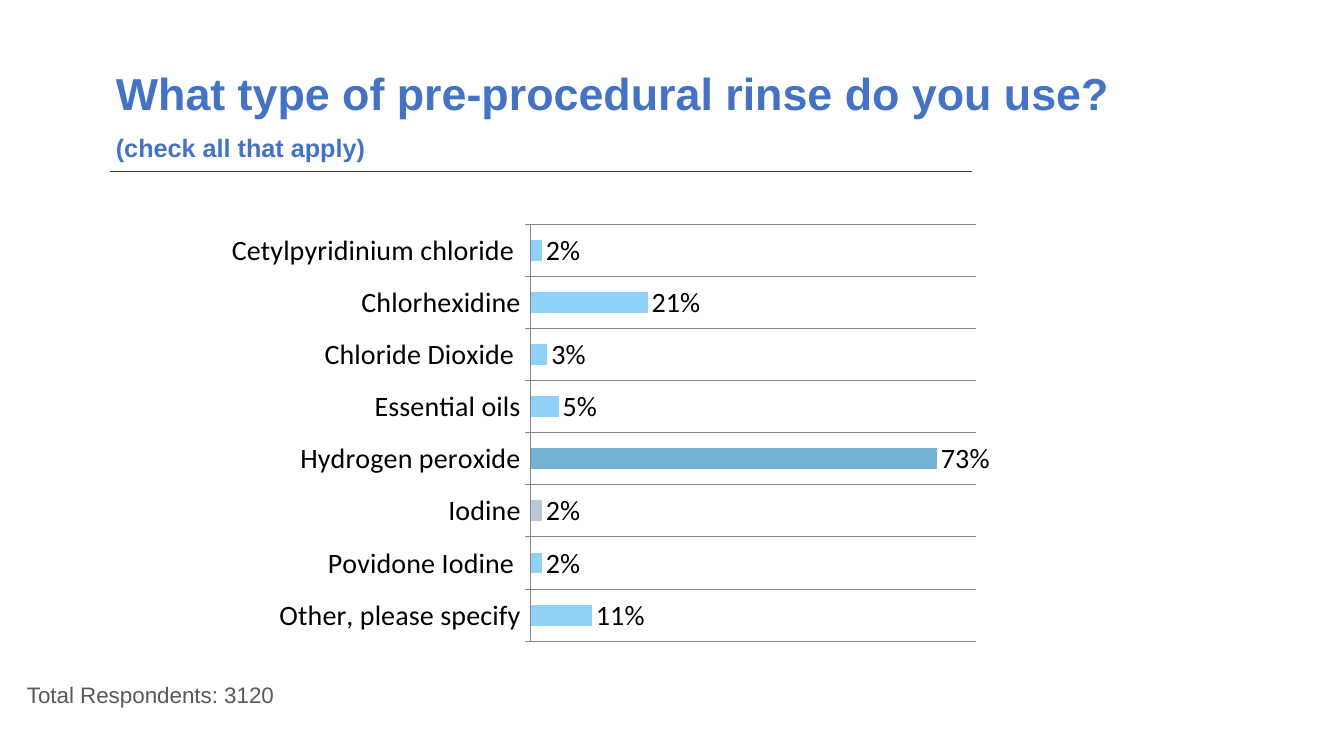
import pptx
import pptx.chart.data
import pptx.dml.color
import pptx.enum.chart
import pptx.enum.shapes
import pptx.enum.text
import pptx.oxml
import pptx.oxml.ns
import pptx.util
from lxml import etree

RGBColor = pptx.dml.color.RGBColor
TITLE_BLUE = RGBColor(0x44, 0x72, 0xC4)
NOTE_GRAY = RGBColor(0x59, 0x59, 0x59)
RULE_GRAY = RGBColor(0x40, 0x40, 0x40)
GRID_GRAY = RGBColor(0x86, 0x86, 0x86)
BLACK = RGBColor(0x00, 0x00, 0x00)
BAR_BLUE = RGBColor(0x8E, 0xD3, 0xF7)
TOP_BAR_BLUE = RGBColor(0x75, 0xB2, 0xD2)
LOW_BAR_GRAY = RGBColor(0xBA, 0xCA, 0xD4)

EMU_PER_PX = 914400 / 100.8
RINSES = [
    ("Cetylpyridinium chloride ", 0.02),
    ("Chlorhexidine", 0.21),
    ("Chloride Dioxide ", 0.03),
    ("Essential oils", 0.05),
    ("Hydrogen peroxide", 0.73),
    ("Iodine", 0.02),
    ("Povidone Iodine ", 0.02),
    ("Other, please specify", 0.11),
]
POINT_COLORS = {4: TOP_BAR_BLUE, 5: LOW_BAR_GRAY}
PLOT_AREA = {"x": 0.48, "y": 0.034, "w": 0.503, "h": 0.931}


def px(length):
    return pptx.util.Emu(round(length * EMU_PER_PX))


def set_font(font, name, size, color, bold=False):
    font.name = name
    font.size = pptx.util.Pt(size)
    font.bold = bold
    font.color.rgb = color


def add_text(page, left, top, width, height, lines, color, bold=False):
    """Add a box with one paragraph per (text, size, space before)."""
    box = page.shapes.add_textbox(px(left), px(top), px(width), px(height))
    frame = box.text_frame
    frame.word_wrap = True
    frame.vertical_anchor = pptx.enum.text.MSO_ANCHOR.TOP
    frame.text = "\n".join(text for text, size, gap in lines)
    for para, (text, size, gap) in zip(frame.paragraphs, lines):
        para.line_spacing = 0.9
        para.space_before = pptx.util.Pt(gap)
        for span in para.runs:
            set_font(span.font, "Arial", size, color, bold)


def add_rule(page, left, right, y):
    rule = page.shapes.add_connector(
        pptx.enum.shapes.MSO_CONNECTOR.STRAIGHT, px(left), px(y), px(right), px(y))
    rule.line.color.rgb = RULE_GRAY
    rule.line.width = pptx.util.Pt(0.5)
    etree.SubElement(rule.element.spPr, pptx.oxml.ns.qn("a:effectLst"))


def fix_plot_area(chart):
    """Give the inner plot area a manual layout."""
    plot_area = chart.element.find(".//" + pptx.oxml.ns.qn("c:plotArea"))
    for old_layout in plot_area.findall(pptx.oxml.ns.qn("c:layout")):
        plot_area.remove(old_layout)
    layout = etree.Element(pptx.oxml.ns.qn("c:layout"))
    manual = etree.SubElement(layout, pptx.oxml.ns.qn("c:manualLayout"))
    settings = [("layoutTarget", "inner"), ("xMode", "edge"), ("yMode", "edge")]
    for tag, value in settings + list(PLOT_AREA.items()):
        etree.SubElement(manual, pptx.oxml.ns.qn("c:" + tag)).set("val", str(value))
    plot_area.insert(0, layout)


def style_axes(chart):
    names = chart.category_axis
    names.reverse_order = True
    names.has_major_gridlines = True
    names.major_tick_mark = pptx.enum.chart.XL_TICK_MARK.OUTSIDE
    set_font(names.tick_labels.font, "Calibri", 20, BLACK)
    for line in (names.format.line, names.major_gridlines.format.line):
        line.color.rgb = GRID_GRAY
        line.width = pptx.util.Pt(0.75)
    shares = chart.value_axis
    shares.minimum_scale = 0
    shares.maximum_scale = 0.8
    shares.has_major_gridlines = False
    shares.visible = False


def style_bars(plot):
    plot.gap_width = 150
    plot.vary_by_categories = False
    series = plot.series[0]
    series.format.fill.solid()
    series.format.fill.fore_color.rgb = BAR_BLUE
    for index, color in POINT_COLORS.items():
        fill = series.points[index].format.fill
        fill.solid()
        fill.fore_color.rgb = color
    labels = series.data_labels
    labels.show_value = True
    labels.number_format = "0%"
    labels.number_format_is_linked = False
    labels.position = pptx.enum.chart.XL_LABEL_POSITION.OUTSIDE_END
    set_font(labels.font, "Calibri", 20, BLACK)


def add_bar_chart(page, left, top, width, height):
    data = pptx.chart.data.CategoryChartData(number_format="0%")
    data.categories = [name for name, share in RINSES]
    data.add_series("Series 1", [share for name, share in RINSES])
    chart = page.shapes.add_chart(
        pptx.enum.chart.XL_CHART_TYPE.BAR_CLUSTERED,
        px(left), px(top), px(width), px(height), data).chart
    chart.has_legend = False
    chart.has_title = False
    set_font(chart.font, "Calibri", 24, BLACK)
    fix_plot_area(chart)
    style_axes(chart)
    style_bars(chart.plots[0])


def main():
    deck = pptx.Presentation()
    deck.slide_width, deck.slide_height = px(1344), px(756)
    page = deck.slides.add_slide(deck.slide_layouts[6])

    # Heading
    add_rule(page, 110, 972, 171)
    add_text(page, 106, 67, 1210, 100, [
        ("What type of pre-procedural rinse do you use?", 32, 0),
        ("(check all that apply)", 18, 11),
    ], TITLE_BLUE, bold=True)

    # Survey answers
    add_bar_chart(page, 106, 209, 885, 448)

    # Footnote
    add_text(page, 17, 679, 1210, 42, [("Total Respondents: 3120", 16, 0)], NOTE_GRAY)

    deck.save("out.pptx")


if __name__ == "__main__":
    main()
